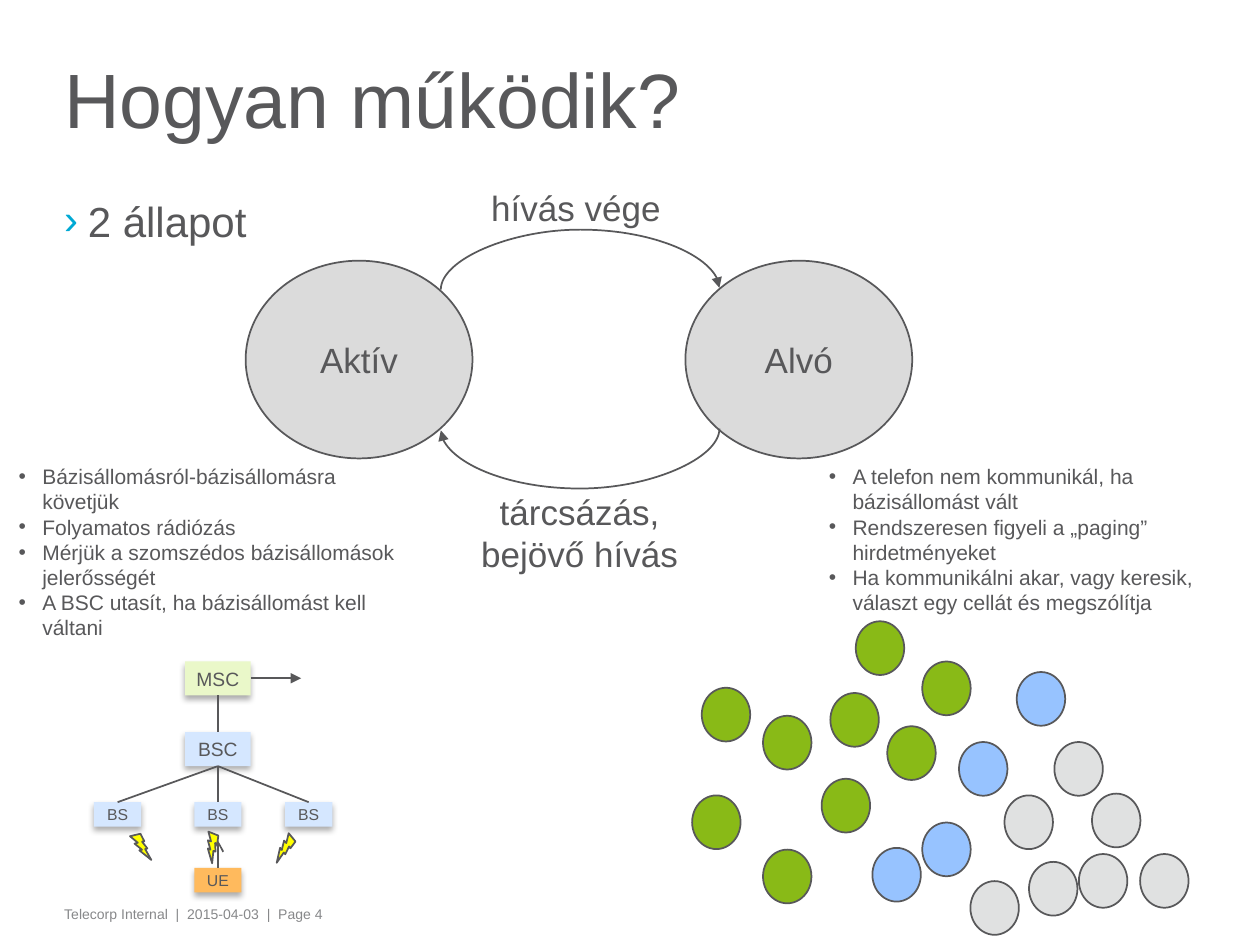
from lxml.etree import SubElement
from pptx import Presentation
from pptx.dml.color import RGBColor
from pptx.enum.shapes import MSO_CONNECTOR, MSO_SHAPE
from pptx.enum.text import MSO_ANCHOR, MSO_AUTO_SIZE, PP_ALIGN
from pptx.oxml.ns import qn
from pptx.util import Pt

DARK = RGBColor(0x58, 0x58, 0x5A)
FOOTER_GREY = RGBColor(0x87, 0x88, 0x8A)
STATE_GREY = RGBColor(0xDB, 0xDB, 0xDB)
CELL_GREY = RGBColor(0xE0, 0xE1, 0xE1)
GREEN = RGBColor(0x89, 0xBA, 0x17)
BLUE = RGBColor(0x97, 0xC3, 0xFF)
PALE_BLUE = RGBColor(0xD5, 0xE7, 0xFF)
PALE_GREEN = RGBColor(0xEA, 0xF8, 0xC9)
ORANGE = RGBColor(0xFF, 0xBA, 0x5D)
YELLOW = RGBColor(0xFF, 0xFF, 0x00)
BULLET_BLUE = RGBColor(0x00, 0xA9, 0xD4)


def write_text(shape, paragraphs, size, align=PP_ALIGN.LEFT, color=DARK,
               bullet=None, bullet_color=DARK, wrap=False):
    frame = shape.text_frame
    frame.word_wrap = wrap
    for index, text in enumerate(paragraphs):
        paragraph = frame.add_paragraph() if index else frame.paragraphs[0]
        paragraph.alignment = align
        paragraph.space_before = Pt(0)
        if bullet:
            properties = paragraph._p.get_or_add_pPr()
            properties.set("marL", str(Pt(13.5)))
            properties.set("indent", str(-Pt(13.5)))
            fill = SubElement(properties, qn("a:buClr"))
            SubElement(fill, qn("a:srgbClr"), val=str(bullet_color))
            SubElement(properties, qn("a:buFont"), typeface="Arial")
            SubElement(properties, qn("a:buChar"), char=bullet)
        for number, line in enumerate(text.split("\n")):
            if number:
                paragraph.add_line_break()
            run = paragraph.add_run()
            run.text = line
            run.font.name = "Arial"
            run.font.size = Pt(size)
            run.font.color.rgb = color


def draw_shape(shapes, kind, left, top, width, height, fill, outlined=True):
    shape = shapes.add_shape(kind, Pt(left), Pt(top), Pt(width), Pt(height))
    shape.shadow.inherit = False
    shape.fill.solid()
    shape.fill.fore_color.rgb = fill
    if outlined:
        shape.line.color.rgb = DARK
        shape.line.width = Pt(1)
    else:
        shape.line.fill.background()
    return shape


presentation = Presentation()
presentation.slide_width, presentation.slide_height = Pt(720), Pt(540)
slide = presentation.slides.add_slide(presentation.slide_layouts[1])

# Title and list
title, body = slide.placeholders[0], slide.placeholders[1]
for placeholder, top, width, height, anchor in [
    (title, 18.7, 590.4, 85.7, MSO_ANCHOR.MIDDLE),
    (body, 111.6, 657.4, 333.4, MSO_ANCHOR.TOP),
]:
    placeholder.left, placeholder.top = Pt(31), Pt(top)
    placeholder.width, placeholder.height = Pt(width), Pt(height)
    frame = placeholder.text_frame
    frame.auto_size = MSO_AUTO_SIZE.NONE
    frame.vertical_anchor = anchor
    frame.margin_left = frame.margin_right = Pt(5.67)
    frame.margin_top = frame.margin_bottom = Pt(0)
write_text(title, ["Hogyan működik?"], 44, wrap=True)
title.text_frame.paragraphs[0].line_spacing = 0.75
write_text(body, ["2 állapot"], 24, bullet="›", bullet_color=BULLET_BLUE, wrap=True)

# Two states
for name, left in [("Aktív", 140.4), ("Alvó", 391.7)]:
    state = draw_shape(slide.shapes, MSO_SHAPE.OVAL, left, 149, 129.6, 113, STATE_GREY)
    state.text_frame.vertical_anchor = MSO_ANCHOR.MIDDLE
    write_text(state, [name], 20, PP_ALIGN.CENTER)

# Transitions: nearly flat curves, turned a quarter
connectors = []
for start, end in [((332, 244.6), (331, 85.4)), ((331, 165.8), (332, 325))]:
    curve = slide.shapes.add_connector(
        MSO_CONNECTOR.CURVE, *[Pt(value) for value in start + end])
    properties = curve.element.spPr
    properties.find(qn("a:xfrm")).set("rot", "5400000")
    adjustments = properties.find(qn("a:prstGeom")).find(qn("a:avLst"))
    SubElement(adjustments, qn("a:gd"), name="adj1", fmla="val 3451700")
    connectors.append((curve, "triangle"))

# Labels, state descriptions and footer
for left, top, width, height, size, align, bullet, color, paragraphs in [
    (273.6, 103, 112.3, 31.7, 20, PP_ALIGN.LEFT, None, DARK, ["hívás vége"]),
    (267.1, 276.5, 128.2, 55.4, 20, PP_ALIGN.CENTER, None, DARK,
     ["tárcsázás,\nbejövő hívás"]),
    (3.6, 261.4, 234, 108.7, 12, PP_ALIGN.LEFT, "•", DARK, [
        "Bázisállomásról-bázisállomásra\nkövetjük",
        "Folyamatos rádiózás",
        "Mérjük a szomszédos bázisállomások\njelerősségét",
        "A BSC utasít, ha bázisállomást kell\nváltani"]),
    (466.6, 261.4, 224.6, 94.3, 12, PP_ALIGN.LEFT, "•", DARK, [
        "A telefon nem kommunikál, ha\nbázisállomást vált",
        "Rendszeresen figyeli a „paging”\nhirdetményeket",
        "Ha kommunikálni akar, vagy keresik,\nválaszt egy cellát és megszólítja"]),
    (31, 514, 582.5, 17.3, 8, PP_ALIGN.LEFT, None, FOOTER_GREY,
     ["Telecorp Internal  |  2015-04-03  |  Page 4"]),
]:
    box = slide.shapes.add_textbox(Pt(left), Pt(top), Pt(width), Pt(height))
    write_text(box, paragraphs, size, align, color, bullet, wrap=color == FOOTER_GREY)
    if color == FOOTER_GREY:
        box.text_frame.margin_left = Pt(5.67)

# Cells by paging area
cells = {
    GREEN: [(507, 415), (436, 409), (436, 485.5), (469.5, 445), (395.5, 454.5),
            (401, 393), (489, 355), (474.5, 396), (527, 378)],
    BLUE: [(548, 424), (527, 470), (581, 384), (498.5, 484.5)],
    CELL_GREY: [(574, 454.5), (602.5, 424), (624, 453.5), (588, 492.5),
                (554.5, 503.5), (616.5, 488), (651.5, 488)],
}
for color, positions in cells.items():
    for left, top in positions:
        draw_shape(slide.shapes, MSO_SHAPE.OVAL, left, top, 27.7, 30.7, color)

# Network tree
network = slide.shapes.add_group_shape().shapes
for name, center, top, width, height, size, color in [
    ("BS", 67.2, 458.4, 27, 14, 9, PALE_BLUE),
    ("BS", 124.5, 458.4, 27, 14, 9, PALE_BLUE),
    ("BS", 176.4, 458.4, 27, 14, 9, PALE_BLUE),
    ("BSC", 124.5, 418.4, 37.5, 19.4, 11, PALE_BLUE),
    ("MSC", 124.5, 378, 37.5, 19.4, 11, PALE_GREEN),
    ("UE", 124.5, 496, 27, 14, 9, ORANGE),
]:
    node = draw_shape(network, MSO_SHAPE.RECTANGLE, center - width / 2, top,
                      width, height, color, outlined=False)
    node.text_frame.vertical_anchor = MSO_ANCHOR.MIDDLE
    write_text(node, [name], size, PP_ALIGN.CENTER)
    shadow = SubElement(node.element.spPr.find(qn("a:effectLst")), qn("a:outerShdw"),
                        blurRad=str(Pt(3.5)), dist=str(Pt(2.2)), dir="5400000",
                        rotWithShape="0")
    shadow_color = SubElement(shadow, qn("a:srgbClr"), val="000000")
    SubElement(shadow_color, qn("a:alpha"), val="32000")

for *ends, arrowhead in [
    (124.5, 437.8, 67.2, 458.4, None),
    (124.5, 437.8, 124.5, 458.4, None),
    (124.5, 437.8, 176.4, 458.4, None),
    (124.5, 397.4, 124.5, 418.4, None),
    (143.3, 387.6, 172.1, 387.6, "triangle"),
    (124.5, 496, 124.5, 480.2, "arrow"),
]:
    link = network.add_connector(MSO_CONNECTOR.STRAIGHT, *[Pt(end) for end in ends])
    connectors.append((link, arrowhead))

# Line style and arrowheads
for connector, arrowhead in connectors:
    connector.line.color.rgb = DARK
    connector.line.width = Pt(1)
    properties = connector.element.spPr
    if arrowhead:
        SubElement(properties.find(qn("a:ln")), qn("a:tailEnd"), type=arrowhead)
    SubElement(properties, qn("a:effectLst"))

# Radio links
for left, top, rotation in [(155.5, 477.4, 74.1), (73.4, 476.6, 10.1), (113.8, 476.6, 45.3)]:
    bolt = draw_shape(slide.shapes, MSO_SHAPE.LIGHTNING_BOLT, left, top, 14.4, 13.7, YELLOW)
    bolt.rotation = rotation

presentation.save("out.pptx")
